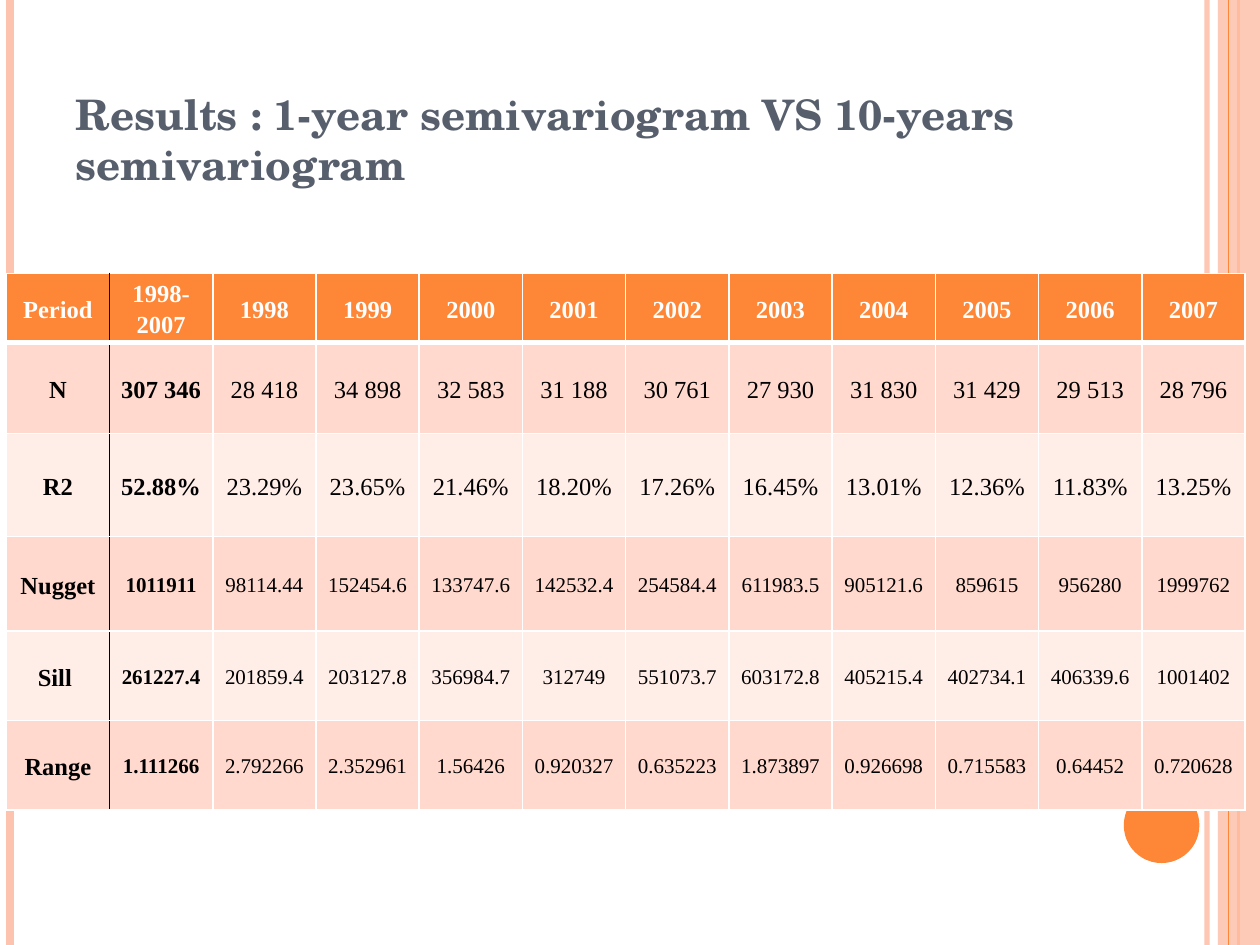
import pptx
import pptx.util
import pptx.dml.color
import pptx.enum.shapes
import pptx.enum.text
import pptx.oxml
import pptx.oxml.ns

Pt = pptx.util.Pt
MID = pptx.enum.text.MSO_ANCHOR.MIDDLE
ALIGN = pptx.enum.text.PP_ALIGN

HEX = {
    "white": "FFFFFF", "black": "000000", "slate": "575F6D", "orange": "FE8637",
    "peach": "FEC3AE", "dark": "FFD9CE", "light": "FFEDE8",
}
TITLE = "Results : 1-year semivariogram VS 10-years semivariogram"
ROWS = [
    ["Period", "1998-2007", "1998", "1999", "2000", "2001", "2002", "2003",
     "2004", "2005", "2006", "2007"],
    ["N", "307 346", "28 418", "34 898", "32 583", "31 188", "30 761", "27 930",
     "31 830", "31 429", "29 513", "28 796"],
    ["R2", "52.88%", "23.29%", "23.65%", "21.46%", "18.20%", "17.26%", "16.45%",
     "13.01%", "12.36%", "11.83%", "13.25%"],
    ["Nugget", "1011911", "98114.44", "152454.6", "133747.6", "142532.4", "254584.4",
     "611983.5", "905121.6", "859615", "956280", "1999762"],
    ["Sill ", "261227.4", "201859.4", "203127.8", "356984.7", "312749", "551073.7",
     "603172.8", "405215.4", "402734.1", "406339.6", "1001402"],
    ["Range", "1.111266", "2.792266", "2.352961", "1.56426", "0.920327", "0.635223",
     "1.873897", "0.926698", "0.715583", "0.64452", "0.720628"],
]
TALL = [39.6, 51.8, 59, 54, 51.1, 51.1]
WIDE = 59
RULES = [(689.8, "peach", 3, 93), (5.8, "peach", 4.5, 100), (707.8, "orange", 1.5, 100)]
EDGE = (702, "orange", 0.75, 100)


def tint(name):
    return pptx.dml.color.RGBColor.from_string(HEX[name])


def fade(fill, alpha):
    clr = fill.find(".//" + pptx.oxml.ns.qn("a:srgbClr"))
    clr.append(pptx.oxml.parse_xml(
        f'<a:alpha {pptx.oxml.ns.nsdecls("a")} val="{alpha * 1000}"/>'))


def rule(slide, x, name, width, alpha):
    line = slide.shapes.add_connector(
        pptx.enum.shapes.MSO_CONNECTOR.STRAIGHT, Pt(x), Pt(0), Pt(x), Pt(540))
    line.line.color.rgb = tint(name)
    line.line.width = Pt(width)
    props = line.element.spPr
    if alpha < 100:
        fade(props, alpha)
    props.append(pptx.oxml.parse_xml(f'<a:effectLst {pptx.oxml.ns.nsdecls("a")}/>'))


def block(slide, kind, box, name, alpha=100):
    shape = slide.shapes.add_shape(kind, *map(Pt, box))
    shape.shadow.inherit = False
    shape.fill.solid()
    shape.fill.fore_color.rgb = tint(name)
    shape.line.fill.background()
    if alpha < 100:
        fade(shape.element.spPr, alpha)


def write(para, text, face, size, name, bold):
    run = para.add_run()
    run.text = text
    run.font.name = face
    run.font.size = Pt(size)
    run.font.bold = bold
    run.font.color.rgb = tint(name)


def border(cell, side, name, width):
    cell._tc.get_or_add_tcPr().append(pptx.oxml.parse_xml(
        f'<a:ln{side} {pptx.oxml.ns.nsdecls("a")} w="{Pt(width)}"><a:solidFill>'
        f'<a:srgbClr val="{HEX[name]}"/></a:solidFill></a:ln{side}>'))


def style(cell, text, row, col):
    head = row == 0
    border(cell, "L", "black" if col == 1 else "white", 1)
    border(cell, "R", "black" if col == 0 else "white", 1)
    border(cell, "T", "white", 3 if row == 1 else 1)
    border(cell, "B", "white", 3 if head else 1)
    cell.fill.solid()
    cell.fill.fore_color.rgb = tint("orange" if head else "dark" if row % 2 else "light")
    cell.vertical_anchor = MID
    cell.margin_left = cell.margin_right = Pt(6.5)
    cell.margin_top = cell.margin_bottom = 0
    para = cell.text_frame.paragraphs[0]
    para.alignment = ALIGN.CENTER
    para.line_spacing = 1.15
    size = 12 if row > 2 and col > 0 else 14
    write(para, text, "Times New Roman", size, "white" if head else "black",
          head or col < 2)


def grid(slide):
    count = len(ROWS[0])
    table = slide.shapes.add_table(
        len(ROWS), count, Pt(3.6), Pt(156.2), Pt(WIDE * count), Pt(sum(TALL))).table
    table.first_row = table.horz_banding = False
    for col in table.columns:
        col.width = Pt(WIDE)
    for r, (texts, tall) in enumerate(zip(ROWS, TALL)):
        table.rows[r].height = Pt(tall)
        for c, text in enumerate(texts):
            style(table.cell(r, c), text, r, c)


def heading(slide):
    title = slide.shapes.title
    title.left, title.top, title.width, title.height = map(Pt, (36, 21.6, 588, 90))
    frame = title.text_frame
    frame.word_wrap = True
    frame.auto_size = pptx.enum.text.MSO_AUTO_SIZE.NONE
    frame.vertical_anchor = pptx.enum.text.MSO_ANCHOR.BOTTOM
    para = frame.paragraphs[0]
    para.alignment = ALIGN.LEFT
    write(para, TITLE, "TeX Gyre Schola", 24, "slate", True)
    title.element.getparent().append(title.element)


def main():
    deck = pptx.Presentation()
    deck.slide_width, deck.slide_height = Pt(720), Pt(540)
    slide = deck.slides.add_slide(deck.slide_layouts[5])
    kinds = pptx.enum.shapes.MSO_SHAPE
    for spec in RULES:
        rule(slide, *spec)
    block(slide, kinds.RECTANGLE, (696, 0, 24, 540), "peach", 87)
    rule(slide, *EDGE)
    block(slide, kinds.OVAL, (642.2, 450, 43.2, 43.2), "orange")
    grid(slide)
    heading(slide)
    deck.save("out.pptx")


if __name__ == "__main__":
    main()
